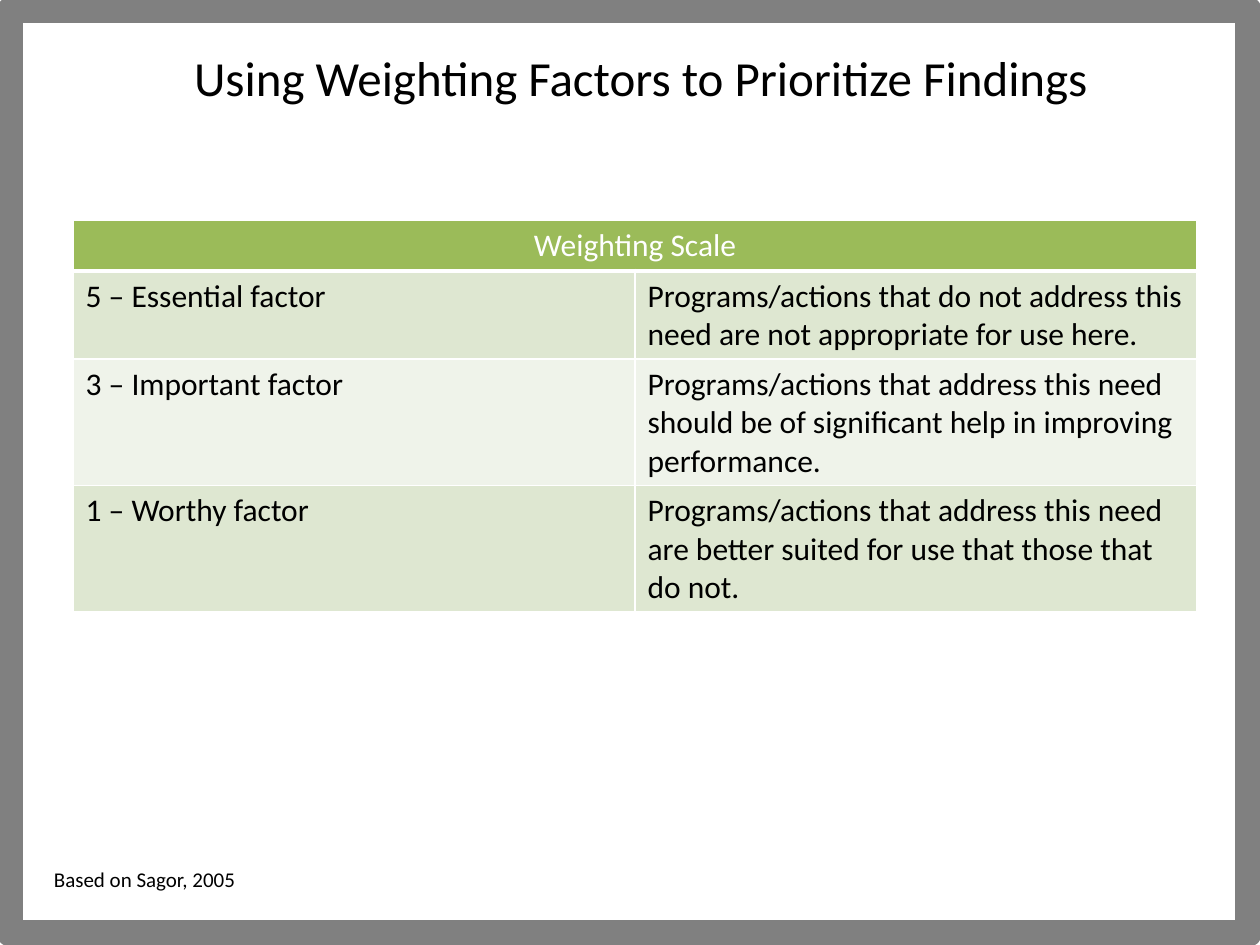
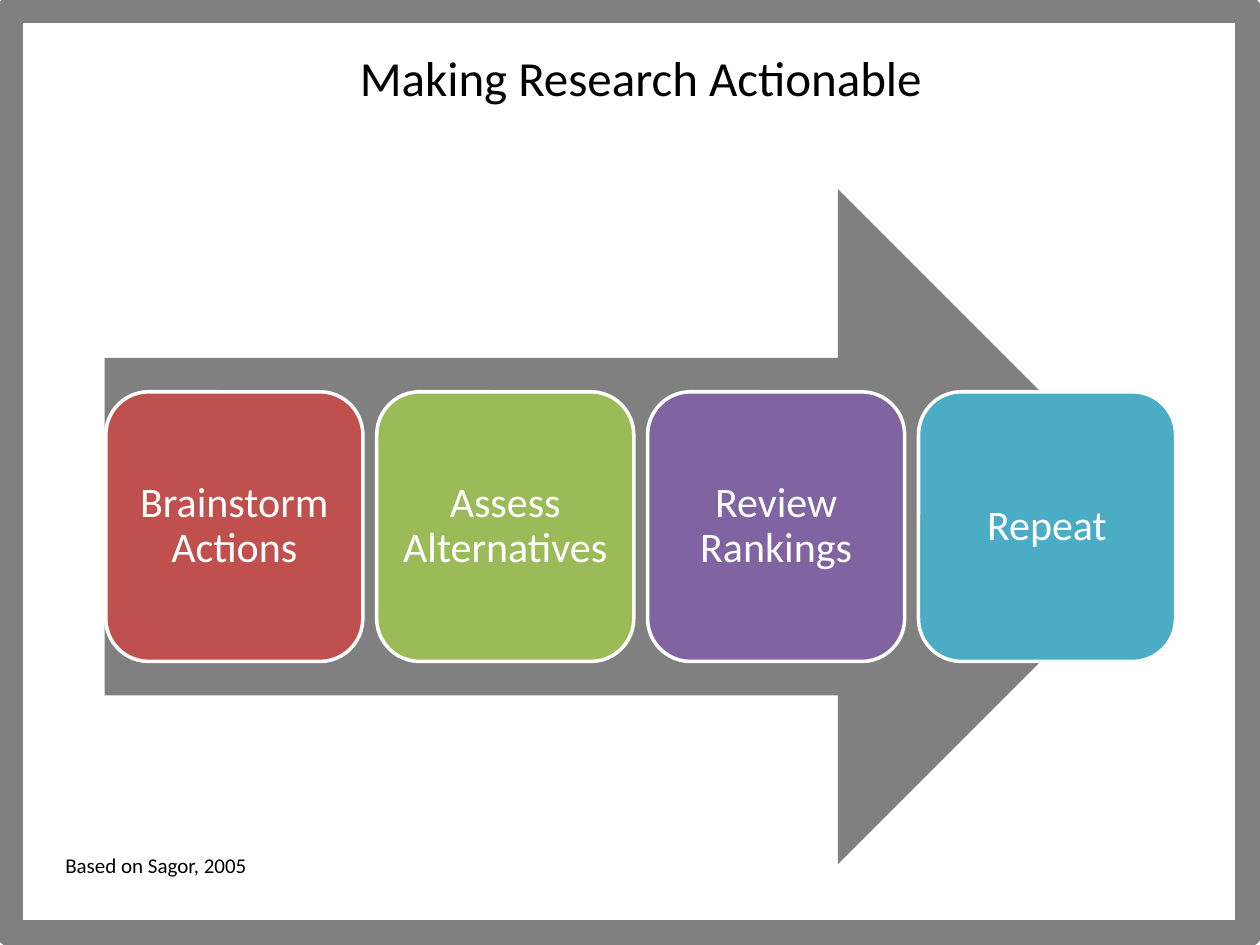
from dataclasses import dataclass

from lxml import etree
from pptx import Presentation
from pptx import util as u
from pptx.dml.color import RGBColor
from pptx.enum import shapes, text
from pptx.oxml import ns

Inches = u.Inches
TITLE_ONLY = 5


@dataclass(frozen=True)
class Theme:
    font: str = "Calibri"
    white: str = "FFFFFF"
    black: str = "000000"
    gray: str = "808080"
    red: str = "C0504D"
    green: str = "9BBB59"
    purple: str = "8064A2"
    teal: str = "4BACC6"
    band_dark: str = "DEE7D1"
    band_light: str = "EFF3EA"
    title_size: int = 28
    step_size: int = 24
    table_size: int = 18
    source_size: int = 12


class Deck:
    def __init__(self, theme):
        self.theme = theme
        self.prs = Presentation()
        self.prs.slide_width, self.prs.slide_height = Inches(10), Inches(7.5)
        self.slide = None

    def add_text(self, tf, words, size, color, align=text.PP_ALIGN.LEFT):
        tf.word_wrap = True
        p = tf.paragraphs[0]
        p.alignment = align
        r = p.add_run()
        r.text = words
        r.font.name = self.theme.font
        r.font.size = u.Pt(size)
        r.font.color.rgb = RGBColor.from_string(color)
        return p

    def shape(self, kind, left, top, width, height, fill, line=None, line_width=0):
        sp = self.slide.shapes.add_shape(
            kind, Inches(left), Inches(top), Inches(width), Inches(height))
        sp.shadow.inherit = False
        sp.fill.solid()
        sp.fill.fore_color.rgb = RGBColor.from_string(fill)
        if line:
            sp.line.color.rgb = RGBColor.from_string(line)
            sp.line.width = u.Pt(line_width)
        else:
            sp.line.fill.background()
        return sp

    def add_frame_to_layout(self):
        """Draw the gray page border and move it behind everything in the layout."""
        t = self.theme
        frame = self.shape(shapes.MSO_SHAPE.RECTANGLE, 0.08, 0.08, 9.83, 7.33,
                           t.white, t.gray, 15)
        self.slide.slide_layout.shapes.element.insert(2, frame.element)

    def new_slide(self, title):
        self.slide = self.prs.slides.add_slide(self.prs.slide_layouts[TITLE_ONLY])
        if len(self.prs.slides) == 1:
            self.add_frame_to_layout()
        sp = self.slide.shapes.title
        sp.left, sp.top = Inches(0.25), Inches(0.33)
        sp.width, sp.height = Inches(9.67), Inches(0.57)
        tf = sp.text_frame
        tf.vertical_anchor = text.MSO_ANCHOR.TOP
        tf.auto_size = text.MSO_AUTO_SIZE.SHAPE_TO_FIT_TEXT
        self.add_text(tf, title, self.theme.title_size, self.theme.black,
                      text.PP_ALIGN.CENTER)

    def source(self, words, left, top):
        sp = self.slide.shapes.add_textbox(
            Inches(left), Inches(top), Inches(1.67), Inches(0.3))
        self.add_text(sp.text_frame, words, self.theme.source_size, self.theme.black)

    def step(self, words, left, top, width, height, fill):
        t = self.theme
        sp = self.shape(shapes.MSO_SHAPE.ROUNDED_RECTANGLE,
                        left, top, width, height, fill, t.white, 2)
        tf = sp.text_frame
        tf.margin_left = tf.margin_right = tf.margin_top = tf.margin_bottom = 0
        tf.vertical_anchor = text.MSO_ANCHOR.MIDDLE
        p = self.add_text(tf, words, t.step_size, t.white, text.PP_ALIGN.CENTER)
        p.line_spacing = 0.9

    def borders(self, cell, bottom=1):
        """Outline a cell in white; the lines must precede its fill in the XML."""
        tc_pr = cell._tc.get_or_add_tcPr()
        for i, (side, width) in enumerate(zip("LRTB", (1, 1, 1, bottom))):
            ln = etree.Element(ns.qn(f"a:ln{side}"), w=str(int(u.Pt(width))))
            fill = etree.SubElement(ln, ns.qn("a:solidFill"))
            etree.SubElement(fill, ns.qn("a:srgbClr"), val=self.theme.white)
            tc_pr.insert(i, ln)

    def cell(self, cell, fill, bottom=1):
        cell.fill.solid()
        cell.fill.fore_color.rgb = RGBColor.from_string(fill)
        self.borders(cell, bottom)

    def table(self, header, rows, left, top, width, row_heights):
        t = self.theme
        table = self.slide.shapes.add_table(
            len(rows) + 1, len(rows[0]), Inches(left), Inches(top),
            Inches(width), Inches(sum(row_heights))).table
        table.first_row = table.horz_banding = False
        for row, height in zip(table.rows, row_heights):
            row.height = Inches(height)

        for cell in table.rows[0].cells:
            self.cell(cell, t.green, bottom=3)
        heading = table.cell(0, 0)
        heading.merge(table.cell(0, len(rows[0]) - 1))
        self.add_text(heading.text_frame, header, t.table_size, t.white,
                      text.PP_ALIGN.CENTER)

        for i, row in enumerate(rows):
            for j, words in enumerate(row):
                cell = table.cell(i + 1, j)
                self.cell(cell, t.band_light if i % 2 else t.band_dark)
                self.add_text(cell.text_frame, words, t.table_size, t.black)


def weighting_slide(deck):
    deck.new_slide("Using Weighting Factors to Prioritize Findings")
    factors = [
        ("5 – Essential factor",
         "Programs/actions that do not address this need are not appropriate "
         "for use here."),
        ("3 – Important factor",
         "Programs/actions that address this need should be of significant help "
         "in improving performance."),
        ("1 – Worthy factor",
         "Programs/actions that address this need are better suited for use that "
         "those that do not."),
    ]
    deck.table("Weighting Scale", factors, 0.58, 1.75, 8.92, (0.4, 0.7, 1, 1))
    deck.source("Based on Sagor, 2005", 0.33, 6.83)


def actionable_slide(deck):
    t = deck.theme
    deck.new_slide("Making Research Actionable")
    deck.source("Based on Sagor, 2005", 0.42, 6.72)
    deck.shape(shapes.MSO_SHAPE.RIGHT_ARROW, 0.83, 1.5, 8.5, 5.36, t.gray)
    steps = [("Brainstorm Actions", t.red), ("Assess Alternatives", t.green),
             ("Review Rankings", t.purple), ("Repeat", t.teal)]
    width, gap = 2.04, 0.11
    for i, (words, fill) in enumerate(steps):
        deck.step(words, 0.84 + i * (width + gap), 3.11, width, 2.14, fill)


def main():
    deck = Deck(Theme())
    weighting_slide(deck)
    actionable_slide(deck)
    deck.prs.save("out.pptx")


if __name__ == "__main__":
    main()
